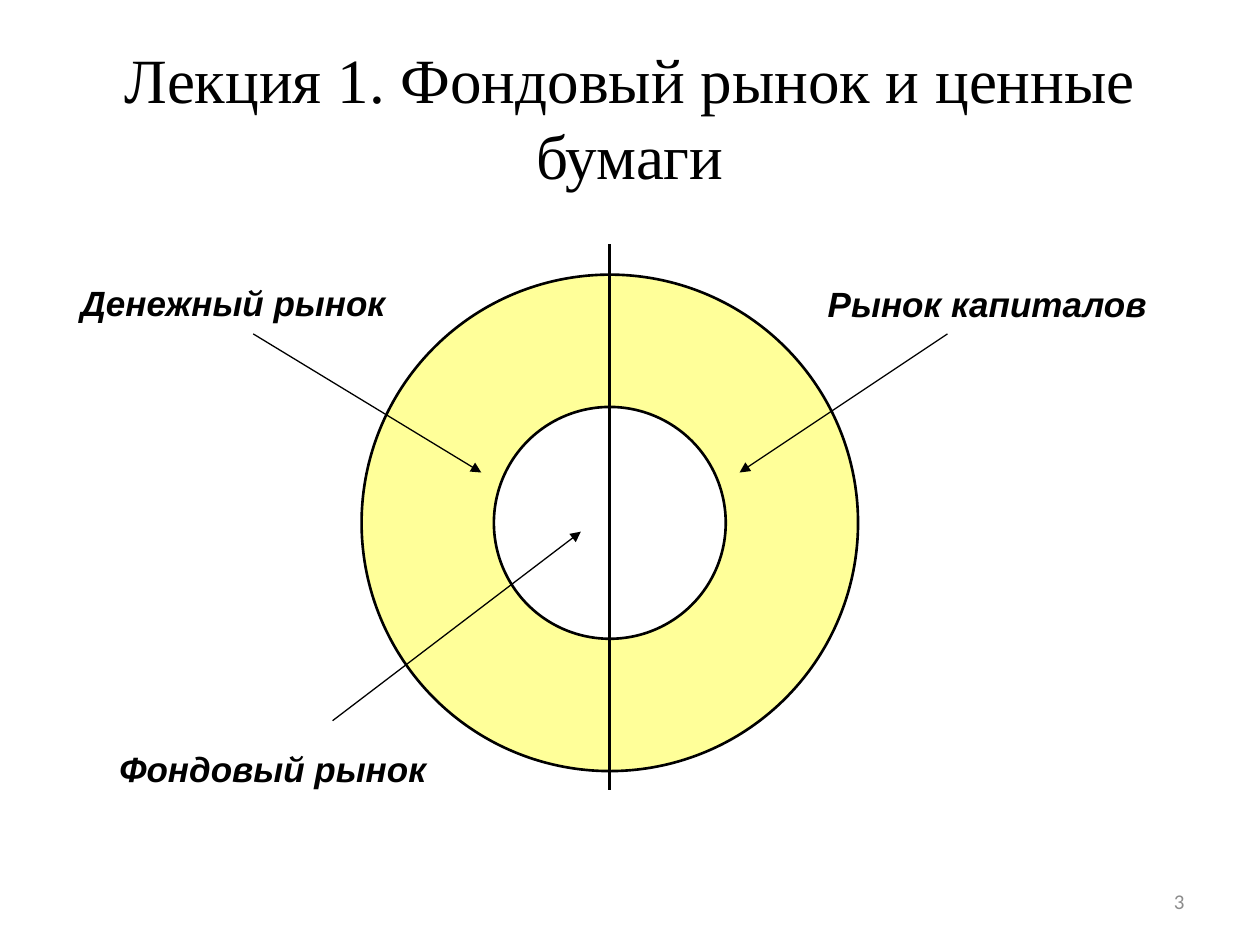
from dataclasses import dataclass

from lxml import etree
from pptx import Presentation
from pptx.dml.color import RGBColor
from pptx.enum.shapes import MSO_CONNECTOR, MSO_SHAPE
from pptx.enum.text import MSO_ANCHOR, PP_ALIGN
from pptx.oxml.ns import qn
from pptx.util import Emu, Pt

STRAIGHT = MSO_CONNECTOR.STRAIGHT
DONUT, RECTANGLE = MSO_SHAPE.DONUT, MSO_SHAPE.RECTANGLE
MIDDLE = MSO_ANCHOR.MIDDLE
CENTER, RIGHT = PP_ALIGN.CENTER, PP_ALIGN.RIGHT

EMU_PER_PX = 9144  # 100 px to the inch
BLACK, WHITE, YELLOW, GRAY = "000000", "FFFFFF", "FFFF99", "8C8C8C"
RING_DIAMETER, RING_WIDTH = 394, 105


@dataclass(frozen=True)
class Box:
    left: int
    top: int
    width: int
    height: int

    def emu(self) -> list[Emu]:
        return [px(n) for n in (self.left, self.top, self.width, self.height)]


@dataclass(frozen=True)
class Market:
    name: str
    label: Box
    arrow_start: tuple[int, int]
    arrow_end: tuple[int, int]


MARKETS = [
    Market("Денежный рынок", Box(51, 218, 268, 44), (201, 265), (382, 375)),
    Market("Фондовый рынок", Box(59, 588, 315, 44), (264, 572), (461, 422)),
    Market("Рынок капиталов", Box(634, 219, 299, 44), (752, 265), (587, 375)),
]


def px(length: int) -> Emu:
    return Emu(length * EMU_PER_PX)


def color(hex_value: str) -> RGBColor:
    return RGBColor.from_string(hex_value)


def write(shape, text: str, *, font: str, size: int, fill: str = BLACK,
          align=CENTER, bold: bool = False, italic: bool = False) -> None:
    frame = shape.text_frame
    frame.word_wrap = True
    frame.vertical_anchor = MIDDLE
    paragraph = frame.paragraphs[0]
    paragraph.alignment = align
    run = paragraph.add_run()
    run.text = text
    run.font.name, run.font.size = font, Pt(size)
    run.font.bold, run.font.italic = bold, italic
    run.font.color.rgb = color(fill)


def add_filled(slide, kind, box: Box, fill: str):
    shape = slide.shapes.add_shape(kind, *box.emu())
    shape.shadow.inherit = False
    shape.fill.solid()
    shape.fill.fore_color.rgb = color(fill)
    shape.line.fill.background()
    return shape


def add_line(slide, start: tuple[int, int], end: tuple[int, int],
             width: float, arrow: bool = False) -> None:
    connector = slide.shapes.add_connector(
        STRAIGHT, *(px(n) for n in (*start, *end)))
    connector.line.color.rgb = color(BLACK)
    connector.line.width = Pt(width)
    if arrow:
        outline = connector.line._get_or_add_ln()
        etree.SubElement(outline, qn("a:tailEnd"), type="triangle")
    etree.SubElement(connector._element.spPr, qn("a:effectLst"))


def main() -> None:
    presentation = Presentation()
    presentation.slide_width, presentation.slide_height = px(1000), px(750)
    slide = presentation.slides.add_slide(presentation.slide_layouts[5])

    # Title
    title = slide.shapes.title
    title.left, title.top, title.width, title.height = Box(50, 30, 900, 125).emu()
    write(title, "Лекция 1. Фондовый рынок и ценные бумаги",
          font="Times New Roman", size=36)

    # Ring split by a vertical line
    ring = add_filled(slide, DONUT,
                      Box(287, 218, RING_DIAMETER, RING_DIAMETER), YELLOW)
    ring.adjustments[0] = RING_WIDTH / RING_DIAMETER
    ring.line.color.rgb = color(BLACK)
    ring.line.width = Pt(1.5)
    add_line(slide, (484, 194), (484, 627), 1.5)

    # Markets: arrows and labels
    for market in MARKETS:
        add_line(slide, market.arrow_start, market.arrow_end, 0.75, arrow=True)
        label = add_filled(slide, RECTANGLE, market.label, WHITE)
        write(label, market.name, font="Arial", size=20, bold=True, italic=True)

    # Slide number
    number = slide.shapes.add_textbox(*Box(717, 695, 233, 40).emu())
    write(number, "3", font="Calibri", size=12, fill=GRAY, align=RIGHT)

    presentation.save("out.pptx")


if __name__ == "__main__":
    main()
